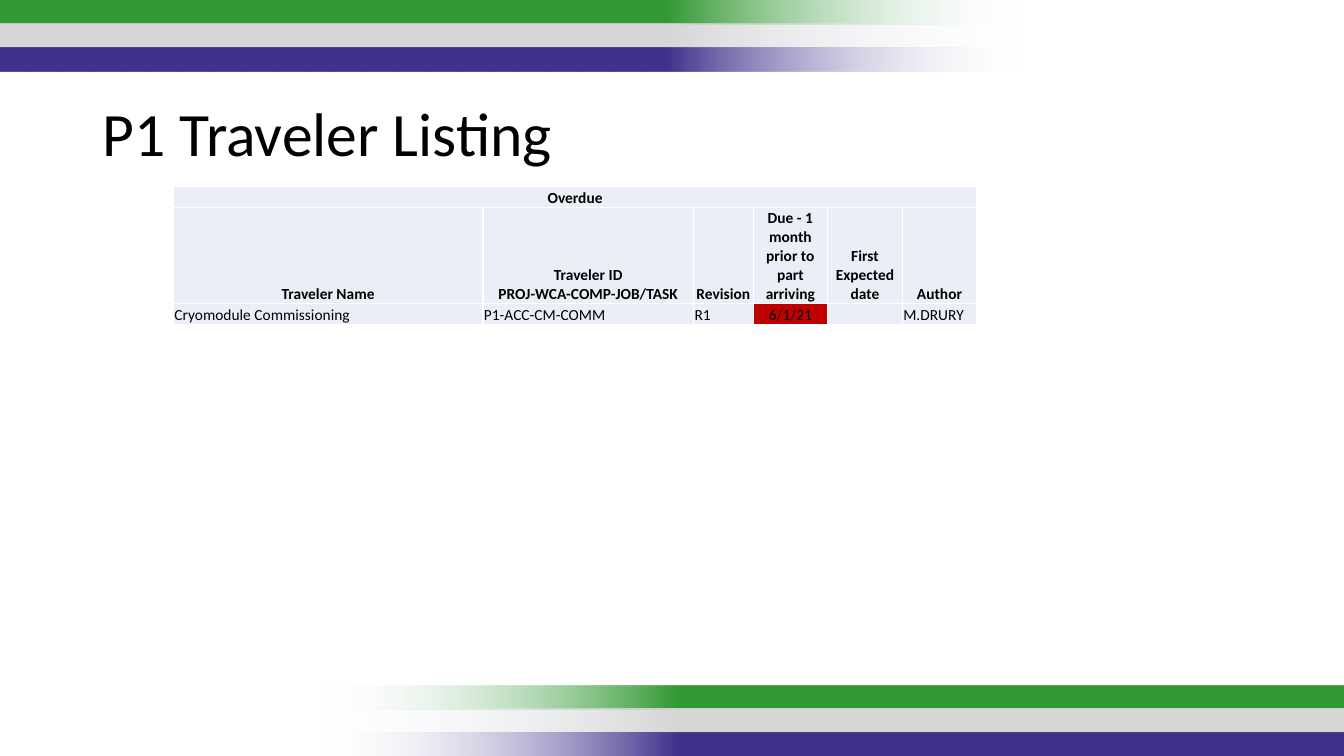
import pptx
import pptx.util
import pptx.dml.color
import pptx.enum.shapes
import pptx.enum.text
import pptx.oxml
import pptx.oxml.ns
from lxml import etree

Inches, Pt = pptx.util.Inches, pptx.util.Pt
ALIGN = pptx.enum.text.PP_ALIGN
ANCHOR = pptx.enum.text.MSO_ANCHOR
A = pptx.oxml.ns.nsdecls("a")


def color(hex_code):
    return pptx.dml.color.RGBColor.from_string(hex_code)


class SlideBuilder:
    font = "Calibri"
    ink, white, fade = "000000", "FFFFFF", "F7FAFD"
    cell_size = 11

    def __init__(self, s):
        self.s = s

    def style_run(self, r, size, bold=False):
        r.font.name = self.font
        r.font.size = Pt(size)
        r.font.bold = bold
        r.font.color.rgb = color(self.ink)

    def title(self, text, x, y, w, h):
        sp = self.s.shapes.title
        sp.left, sp.top, sp.width, sp.height = map(Inches, (x, y, w, h))
        tf = sp.text_frame
        tf.text = text
        tf.word_wrap = True
        tf.vertical_anchor = ANCHOR.MIDDLE
        p = tf.paragraphs[0]
        p.alignment = ALIGN.LEFT
        p.line_spacing = 0.9
        self.style_run(p.runs[0], 44)

    def bar(self, x, y, w, h, fill, rotation=0):
        """Stripe that fades out towards one end."""
        sp = self.s.shapes.add_shape(pptx.enum.shapes.MSO_SHAPE.RECTANGLE,
                                     *map(Inches, (x, y, w, h)))
        sp.rotation = rotation
        sp.shadow.inherit = False
        sp.line.fill.background()
        sp.fill.gradient()
        sp.fill.gradient_angle = 0
        stops = sp.element.spPr.find(".//" + pptx.oxml.ns.qn("a:gsLst"))
        stops.getparent().replace(stops, pptx.oxml.parse_xml(
            f'<a:gsLst {A}>'
            f'<a:gs pos="0"><a:srgbClr val="{self.fade}"><a:alpha val="0"/></a:srgbClr></a:gs>'
            f'<a:gs pos="35000"><a:srgbClr val="{fill}"/></a:gs>'
            f'<a:gs pos="100000"><a:srgbClr val="{fill}"/></a:gs></a:gsLst>'))

    def table(self, x, y, widths, heights, rows):
        frame = self.s.shapes.add_table(len(rows), len(widths), Inches(x), Inches(y),
                                        Inches(sum(widths)), Inches(sum(heights)))
        tbl = frame.table
        tbl.first_row = tbl.horz_banding = False
        for column, w in zip(tbl.columns, widths):
            column.width = Inches(w)
        for row, h in zip(tbl.rows, heights):
            row.height = Inches(h)
        for i, texts in enumerate(rows):
            for j, text in enumerate(texts):
                self.cell(tbl.cell(i, j), text)
        return tbl

    def cell(self, cell, text):
        cell.margin_left = cell.margin_right = cell.margin_top = Inches(0.01)
        cell.margin_bottom = 0
        cell.vertical_anchor = ANCHOR.BOTTOM
        for side in "LRTB":
            cell._tc.get_or_add_tcPr().append(pptx.oxml.parse_xml(
                f'<a:ln{side} {A} w="12700"><a:solidFill><a:srgbClr val="{self.white}"/>'
                f'</a:solidFill></a:ln{side}>'))
        self.fill_cell(cell, "EAEFF7")
        cell.text = text
        p = cell.text_frame.paragraphs[0]
        for r in p.runs:
            self.style_run(r, self.cell_size)
        if not text:
            # Keeps an empty cell from stretching its row
            end = etree.SubElement(p._p, pptx.oxml.ns.qn("a:endParaRPr"))
            end.set("sz", str(self.cell_size * 100))

    def fill_cell(self, cell, fill):
        cell.fill.solid()
        cell.fill.fore_color.rgb = color(fill)

    def center_cell(self, cell, bold=False):
        p = cell.text_frame.paragraphs[0]
        p.alignment = ALIGN.CENTER
        for r in p.runs:
            r.font.bold = bold


def main():
    prs = pptx.Presentation()
    prs.slide_width, prs.slide_height = Inches(13.33), Inches(7.5)
    s = prs.slides.add_slide(prs.slide_layouts[5])
    b = SlideBuilder(s)

    # Stripes along the top and bottom edges
    for fill, offset in (("339933", 0), ("D6D6D6", 0.23), ("42318C", 0.47)):
        b.bar(-0.01, offset, 10.17, 0.24, fill, rotation=180)
        b.bar(3.17, 6.8 + offset, 10.17, 0.24, fill)

    # Title
    b.title("P1 Traveler Listing", 0.92, 0.86, 11.5, 0.99)

    # Traveler table
    tbl = b.table(1.72, 1.85, [3.07, 2.09, 0.59, 0.74, 0.74, 0.74], [0.21, 0.95, 0.21], [
        ["Overdue", "", "", "", "", ""],
        ["Traveler Name", "Traveler ID\vPROJ-WCA-COMP-JOB/TASK", "Revision",
         "Due - 1 month prior to part arriving", "First Expected date", "Author"],
        ["Cryomodule Commissioning", "P1-ACC-CM-COMM", "R1", "6/1/21", "", "M.DRURY"],
    ])
    tbl.cell(0, 0).merge(tbl.cell(0, 5))
    b.center_cell(tbl.cell(0, 0), bold=True)
    for j in range(6):
        b.center_cell(tbl.cell(1, j), bold=True)

    # Overdue date
    due = tbl.cell(2, 3)
    b.center_cell(due)
    b.fill_cell(due, "C00000")

    prs.save("out.pptx")


if __name__ == "__main__":
    main()
